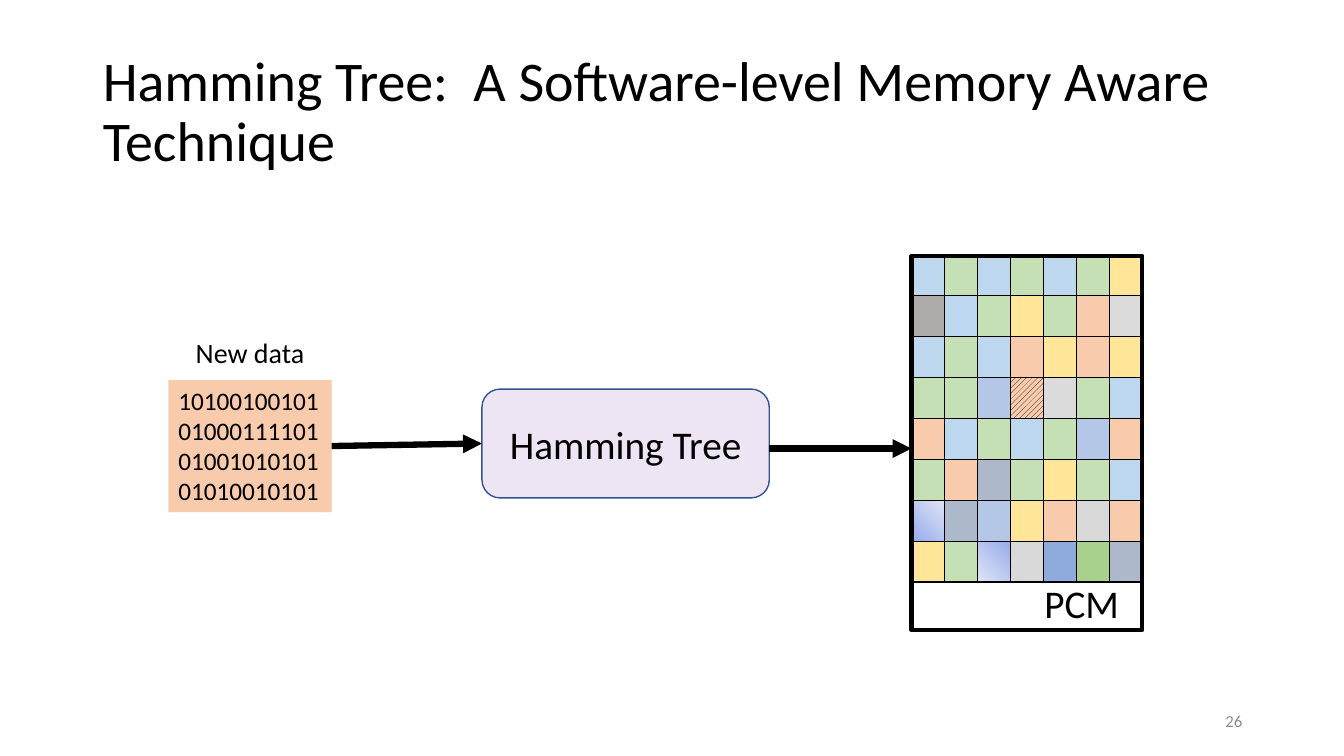
from lxml import etree
from pptx import Presentation
from pptx.dml.color import RGBColor
from pptx.enum.dml import MSO_PATTERN
from pptx.enum.shapes import MSO_CONNECTOR, MSO_SHAPE
from pptx.enum.text import MSO_ANCHOR, PP_ALIGN
from pptx.oxml import parse_xml
from pptx.oxml.ns import qn
from pptx.util import Inches, Pt

NS = 'xmlns:a="http://schemas.openxmlformats.org/drawingml/2006/main"'


def rgb(code):
    return RGBColor.from_string(code)


def write(shape, text, size, align=PP_ALIGN.LEFT, anchor=MSO_ANCHOR.TOP, color="000000"):
    tf = shape.text_frame
    tf.word_wrap = True
    tf.vertical_anchor = anchor
    p = tf.paragraphs[0]
    p.alignment = align
    r = p.add_run()
    r.text = text
    r.font.size, r.font.name = Pt(size), "Calibri"
    r.font.color.rgb = rgb(color)
    return p


prs = Presentation()
prs.slide_width, prs.slide_height = Inches(13.33), Inches(7.5)
s = prs.slides.add_slide(prs.slide_layouts[5])

# Title
title = s.shapes.title
title.left, title.top = Inches(0.92), Inches(0.4)
title.width, title.height = Inches(11.5), Inches(1.45)
p = write(title, "Hamming Tree:  A Software-level Memory Aware Technique", 40,
          anchor=MSO_ANCHOR.MIDDLE)
p.line_spacing = 0.9

# Memory cells: one letter per colour
PALETTE = {"b": "BDD7EE", "g": "C5E0B4", "y": "FFE699", "o": "F8CBAD", "d": "AFABAB",
           "l": "DBDBDB", "w": "D9D9D9", "p": "B4C7E7", "s": "ADB9CA", "m": "8FAADC",
           "e": "A9D18E"}
HATCHED, RADIAL, LINEAR = "H", "R", "L"
MEMORY = ["bgbgbgy", "dbgygol", "bgboyoy", "ggpHlgb",
          "obgbgpo", "gosgygb", "Rspyowo", "ygLwmes"]
PCM_LEFT, PCM_WIDTH, ROW = Inches(9.04), Inches(2.29), Inches(0.4)
rows, cols = len(MEMORY), len(MEMORY[0])
frame = s.shapes.add_table(rows, cols, PCM_LEFT, Inches(2.53), PCM_WIDTH, ROW * rows)
table = frame.table
table.first_row = table.horz_banding = False
for i, line in enumerate(MEMORY):
    for j, key in enumerate(line):
        cell = table.cell(i, j)
        fill = cell.fill
        tcPr = cell._tc.get_or_add_tcPr()
        if key == HATCHED:
            fill.patterned()
            fill.pattern = MSO_PATTERN.WIDE_UPWARD_DIAGONAL
            fill.fore_color.rgb, fill.back_color.rgb = rgb("000000"), rgb(PALETTE["o"])
        elif key in (RADIAL, LINEAR):
            fill.gradient()
            fill.gradient_angle = 225
            for stop, code in zip(fill.gradient_stops, ("96ABEA", "E0E5F7")):
                stop.color.rgb = rgb(code)
            if key == RADIAL:
                lin = tcPr.find(".//" + qn("a:lin"))
                lin.getparent().replace(lin, parse_xml(
                    f'<a:path {NS} path="circle">'
                    '<a:fillToRect t="100000" r="100000"/></a:path>'))
        else:
            fill.solid()
            fill.fore_color.rgb = rgb(PALETTE[key])
        for k, side in enumerate(("lnL", "lnR", "lnT", "lnB")):
            tcPr.insert(k, parse_xml(
                f'<a:{side} {NS} w="12700"><a:solidFill><a:srgbClr val="000000"/>'
                f'</a:solidFill></a:{side}>'))

# Boxes: shape, left, top, width, height, fill, line, line width
boxes = []
for kind, x, y, w, h, fill, line, weight in [
    (MSO_SHAPE.ROUNDED_RECTANGLE, 4.78, 3.86, 2.85, 1.08, "7030A0", "325491", 1),
    (MSO_SHAPE.RECTANGLE, 9.04, 2.54, 2.29, 3.71, None, "000000", 3),
    (MSO_SHAPE.RECTANGLE, 1.67, 3.77, 1.62, 1.31, "F8CBAD", None, 0),
]:
    box = s.shapes.add_shape(kind, Inches(x), Inches(y), Inches(w), Inches(h))
    box.shadow.inherit = False
    if fill:
        box.fill.solid()
        box.fill.fore_color.rgb = rgb(fill)
    else:
        box.fill.background()
    if line:
        box.line.color.rgb, box.line.width = rgb(line), Pt(weight)
    else:
        box.line.fill.background()
    boxes.append(box)
tree, pcm, data = boxes
tint = tree._element.spPr.find(qn("a:solidFill"))[0]
etree.SubElement(tint, qn("a:alpha")).set("val", "12000")
write(tree, "Hamming Tree", 28, PP_ALIGN.CENTER, MSO_ANCHOR.MIDDLE)
write(data, "10100100101010001111010100101010101010010101", 18)

# Labels and slide number
for text, x, y, w, h, size, align, anchor, color in [
    ("PCM", 10.26, 5.7, 1.07, 0.57, 28, PP_ALIGN.LEFT, MSO_ANCHOR.TOP, "000000"),
    ("New data", 1.67, 3.28, 1.62, 0.44, 20, PP_ALIGN.CENTER, MSO_ANCHOR.TOP, "000000"),
    ("26", 9.42, 6.95, 3, 0.4, 12, PP_ALIGN.RIGHT, MSO_ANCHOR.MIDDLE, "8C8C8C"),
]:
    label = s.shapes.add_textbox(Inches(x), Inches(y), Inches(w), Inches(h))
    write(label, text, size, align, anchor, color)

# Arrows
arrows = [s.shapes.add_connector(MSO_CONNECTOR.STRAIGHT, Inches(x1), Inches(y1),
                                 Inches(x2), Inches(y2))
          for x1, y1, x2, y2 in [(3.3, 4.42, 4.78, 4.4), (7.63, 4.45, 9.04, 4.45)]]
arrows[0].begin_connect(data, 3)
arrows[0].end_connect(tree, 1)
for arrow in arrows:
    arrow.line.color.rgb, arrow.line.width = rgb("000000"), Pt(4.5)
    etree.SubElement(arrow.line._get_or_add_ln(), qn("a:tailEnd")).set("type", "triangle")
    etree.SubElement(arrow._element.spPr, qn("a:effectLst"))

prs.save("out.pptx")
